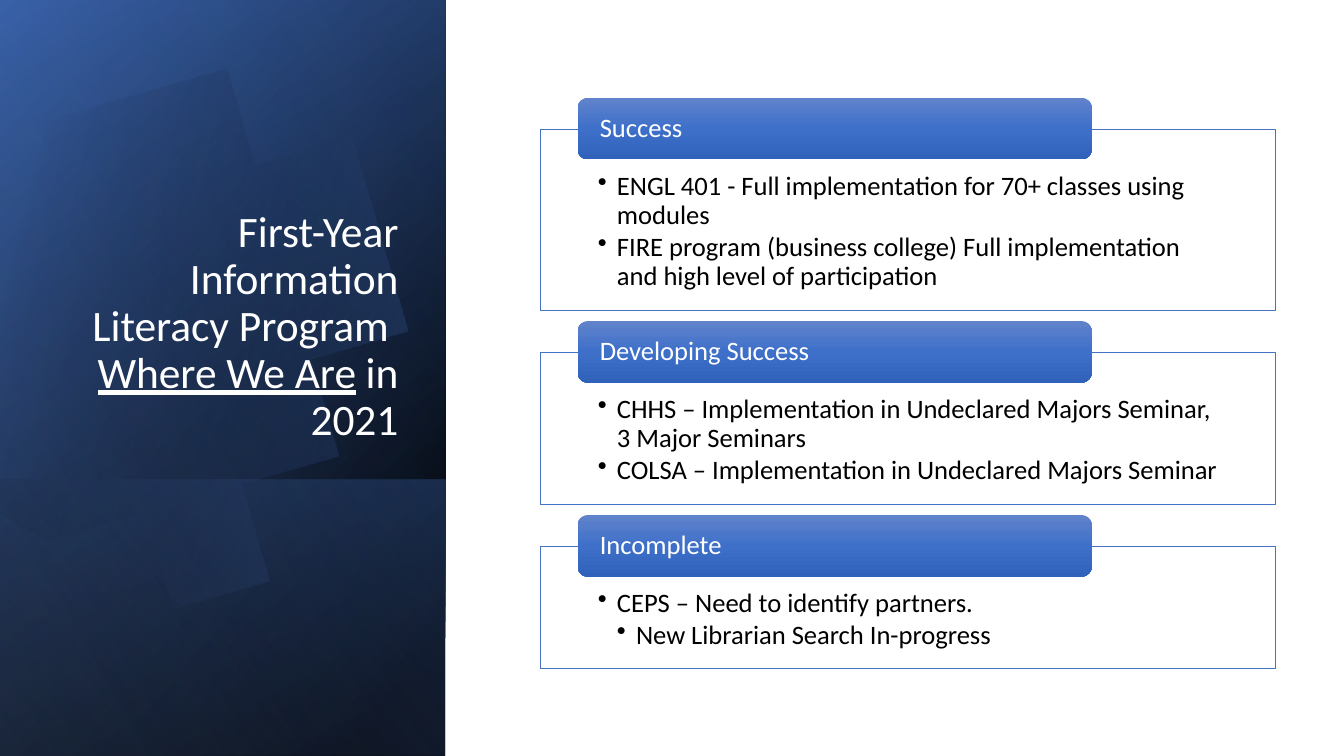
import math
from lxml import etree
from pptx import Presentation, util as u
from pptx.dml.color import RGBColor
from pptx.enum import shapes, text
from pptx.oxml.ns import qn

W, H = 13.33, 7.5
COLORS = {"white": "FFFFFF", "black": "000000", "navy": "2F5597", "blue": "4472C4",
          "sky": "8FAADC", "tab_top": "6183CB", "tab_mid": "3E70CA", "tab_low": "3062BB"}
PANEL_W = 33.15
BOX_X, BOX_W, BOX_TOP, BOX_GAP = 40.2, 54.69, 17.07, 5.53
TAB_X, TAB_W, TAB_H, TAB_RISE = 42.98, 38.26, 8.13, 4.13
INDENT = 0.19
PANELS = [
    (0, 100, [(8, "black", 100), (100, "navy", 100)], 50),
    (0, 100, [(0, "black", 0), (99, "blue", 46)], 30),
    (63.47, 36.53, [(2, "blue", 29), (100, "black", 30)], 130),
]
GLOW = (0, 100, [(0, "black", 0), (99, "sky", 11)], 120)
DISC_CENTER, DISC_TURN = (1.58, 3.35), 343.9
DISC_START = (1.49, 1.1)
DISC = [
    [(2.46, 1.12), (3.35, 1.77), (3.63, 2.75)],
    [(3.98, 3.97), (3.28, 5.23), (2.07, 5.58)],
    [(1.31, 5.8), (0.53, 5.61), (-0.03, 5.14)],
    [(-0.15, 5.03)], [(-0.15, 1.75)], [(0, 1.61)],
    [(0.23, 1.42), (0.5, 1.28), (0.8, 1.19)],
    [(1.03, 1.13), (1.26, 1.1), (1.49, 1.1)],
]
SECTIONS = [
    ("Success", 24, [
        (1, "ENGL 401 - Full implementation for 70+ classes using modules"),
        (1, "FIRE program (business college) Full implementation and high level of participation")]),
    ("Developing Success", 20.13, [
        (1, "CHHS – Implementation in Undeclared Majors Seminar, 3 Major Seminars"),
        (1, "COLSA – Implementation in Undeclared Majors Seminar")]),
    ("Incomplete", 16.13, [
        (1, "CEPS – Need to identify partners."),
        (2, "New Librarian Search In-progress")]),
]


def px(share):
    return u.Inches(W * share / 100)


def py(share):
    return u.Inches(H * share / 100)


def rgb(name):
    return RGBColor.from_string(COLORS[name])


def set_all(obj, values):
    for name, value in values.items():
        setattr(obj, name, value)


def add_alpha(color, percent):
    etree.SubElement(color, qn("a:alpha"), val=str(percent * 1000))


def plain(sp):
    sp.shadow.inherit = False
    sp.line.fill.background()


def gradient(sp, stops, angle):
    plain(sp)
    sp.fill.background()
    grad = etree.Element(qn("a:gradFill"), rotWithShape="1")
    gs_list = etree.SubElement(grad, qn("a:gsLst"))
    for pos, name, opacity in stops:
        gs = etree.SubElement(gs_list, qn("a:gs"), pos=str(pos * 1000))
        color = etree.SubElement(gs, qn("a:srgbClr"), val=COLORS[name])
        add_alpha(color, opacity)
    etree.SubElement(grad, qn("a:lin"), ang=str(angle * 60000), scaled="0")
    sppr = sp._element.spPr
    sppr.replace(sppr.find(qn("a:noFill")), grad)


def panel(s, top, height, stops, angle):
    w, h = px(PANEL_W), py(height)
    sp = s.shapes.add_shape(shapes.MSO_SHAPE.RECTANGLE, (w - h) // 2,
                            py(top) + (h - w) // 2, h, w)
    sp.rotation = 90
    sp._element.spPr.xfrm.set("flipH", "1")
    gradient(sp, stops, angle)


def bezier(start, c1, c2, end, steps=24):
    for i in range(1, steps + 1):
        t = i / steps
        weights = ((1 - t) ** 3, 3 * t * (1 - t) ** 2, 3 * t * t * (1 - t), t ** 3)
        yield tuple(sum(k * pt[axis] for k, pt in zip(weights, (start, c1, c2, end)))
                    for axis in (0, 1))


def unturn(point):
    a = math.radians(-DISC_TURN)
    dx, dy = (v - c for v, c in zip(point, DISC_CENTER))
    return (DISC_CENTER[0] + dx * math.cos(a) - dy * math.sin(a),
            DISC_CENTER[1] + dx * math.sin(a) + dy * math.cos(a))


def disc(s):
    points = [DISC_START]
    for segment in DISC:
        points += bezier(points[-1], *segment) if len(segment) == 3 else segment
    points = [unturn(pt) for pt in points]
    fb = s.shapes.build_freeform(*points[0], scale=u.Inches(1))
    fb.add_line_segments(points[1:], close=True)
    sp = fb.convert_to_shape()
    sp.rotation = DISC_TURN
    gradient(sp, [(29, "black", 0), (100, "blue", 43)], 30)


def add_run(p, words, size, color, underline=None):
    r = p.add_run()
    r.text = words
    set_all(r.font, {"size": u.Pt(size), "name": "Calibri", "underline": underline})
    r.font.color.rgb = rgb(color)


def frame(sp, anchor, insets):
    tf = sp.text_frame
    sides = ("margin_left", "margin_top", "margin_right", "margin_bottom")
    set_all(tf, {"word_wrap": True, "vertical_anchor": anchor})
    set_all(tf, {side: u.Inches(v) for side, v in zip(sides, insets)})
    return tf


def title(s):
    sp = s.shapes.add_textbox(px(4.8), py(24.53), px(25.58), py(34.93))
    tf = frame(sp, text.MSO_ANCHOR.BOTTOM, (0.1, 0.05, 0.1, 0.05))
    p = tf.paragraphs[0]
    set_all(p, {"alignment": text.PP_ALIGN.RIGHT, "line_spacing": 0.9})
    add_run(p, "First-Year Information Literacy Program ", 31, "white")
    p.add_line_break()
    add_run(p, "Where We Are", 31, "white", True)
    add_run(p, " in 2021", 31, "white")


def bullet(p, level):
    ppr = p._p.get_or_add_pPr()
    ppr.set("marL", str(u.Inches(INDENT * level)))
    ppr.set("indent", str(u.Inches(-INDENT)))
    etree.SubElement(ppr, qn("a:buChar"), char="•")


def box(s, top, height, items):
    sp = s.shapes.add_shape(shapes.MSO_SHAPE.RECTANGLE, px(BOX_X), py(top),
                            px(BOX_W), py(height))
    plain(sp)
    sp.fill.solid()
    sp.fill.fore_color.rgb = rgb("white")
    add_alpha(sp._element.spPr.find(qn("a:solidFill"))[0], 90)
    sp.line.color.rgb = rgb("blue")
    sp.line.width = u.Pt(0.5)
    tf = frame(sp, text.MSO_ANCHOR.TOP, (0.57, 0.43, 0.57, 0.15))
    for i, (level, words) in enumerate(items):
        p = tf.add_paragraph() if i else tf.paragraphs[0]
        set_all(p, {"alignment": text.PP_ALIGN.LEFT, "level": level,
                    "line_spacing": 0.9, "space_after": u.Pt(2.5)})
        bullet(p, level)
        add_run(p, words, 19, "black")


def tab(s, top, label):
    sp = s.shapes.add_shape(shapes.MSO_SHAPE.ROUNDED_RECTANGLE, px(TAB_X), py(top),
                            px(TAB_W), py(TAB_H))
    gradient(sp, [(0, "tab_top", 100), (50, "tab_mid", 100), (100, "tab_low", 100)], 90)
    tf = frame(sp, text.MSO_ANCHOR.MIDDLE, (INDENT, 0, INDENT, 0))
    p = tf.paragraphs[0]
    set_all(p, {"alignment": text.PP_ALIGN.LEFT, "line_spacing": 0.9})
    add_run(p, label, 19, "white")


def main():
    prs = Presentation()
    set_all(prs, {"slide_width": u.Inches(W), "slide_height": u.Inches(H)})
    s = prs.slides.add_slide(prs.slide_layouts[6])
    for values in PANELS:
        panel(s, *values)
    disc(s)
    panel(s, *GLOW)
    title(s)
    top = BOX_TOP
    for label, height, items in SECTIONS:
        box(s, top, height, items)
        tab(s, top - TAB_RISE, label)
        top += height + BOX_GAP
    prs.save("out.pptx")


if __name__ == "__main__":
    main()
